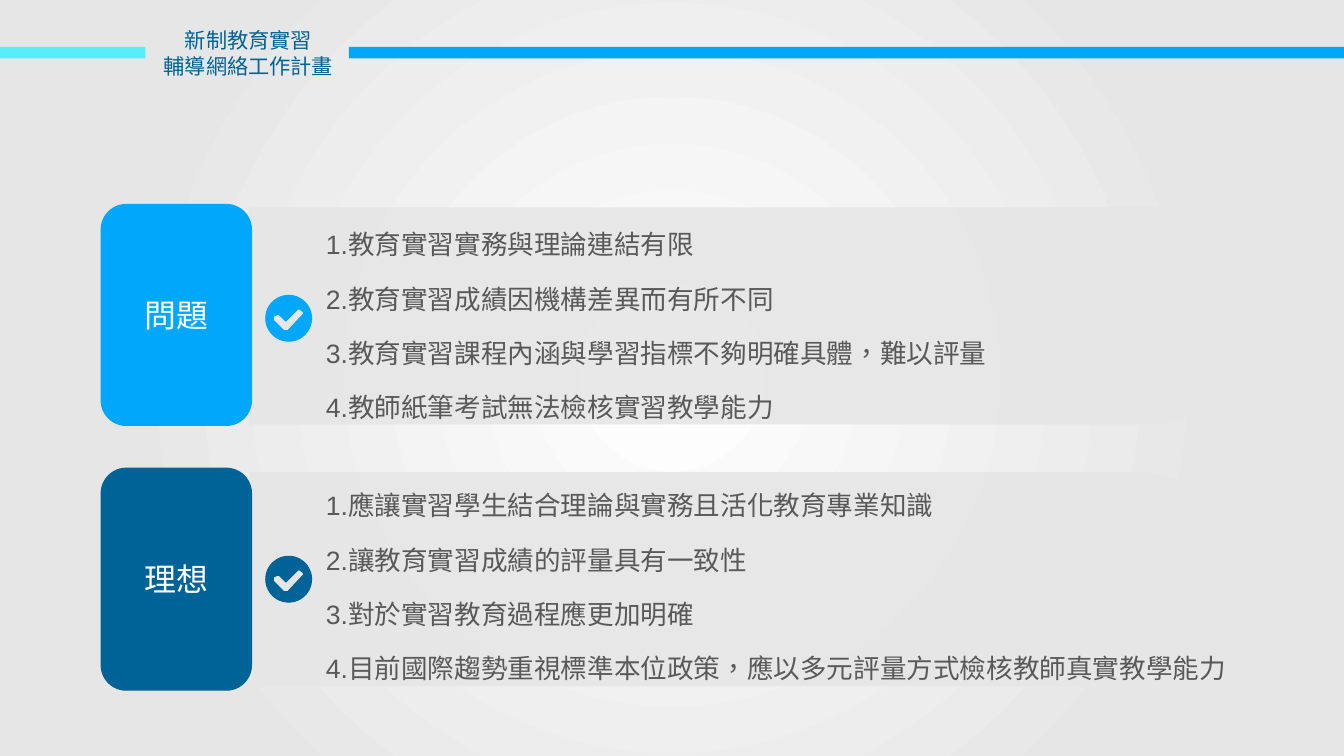
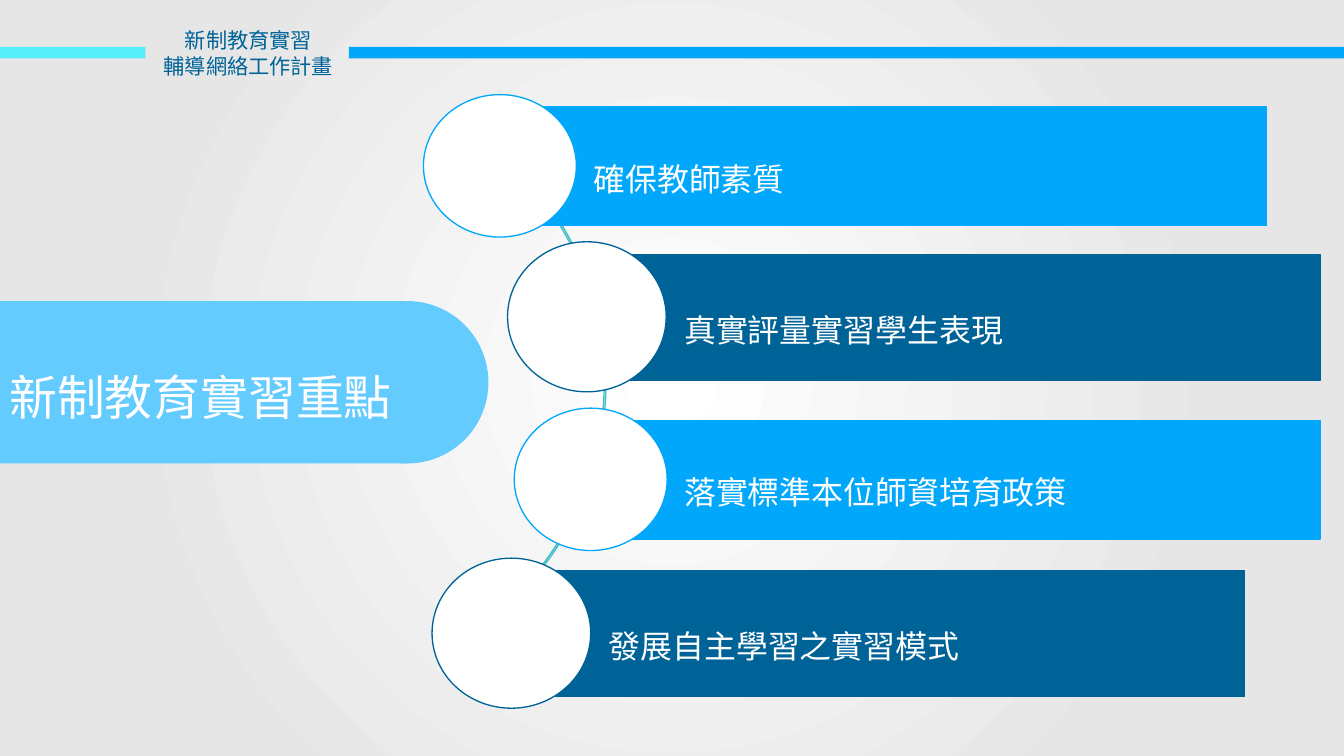
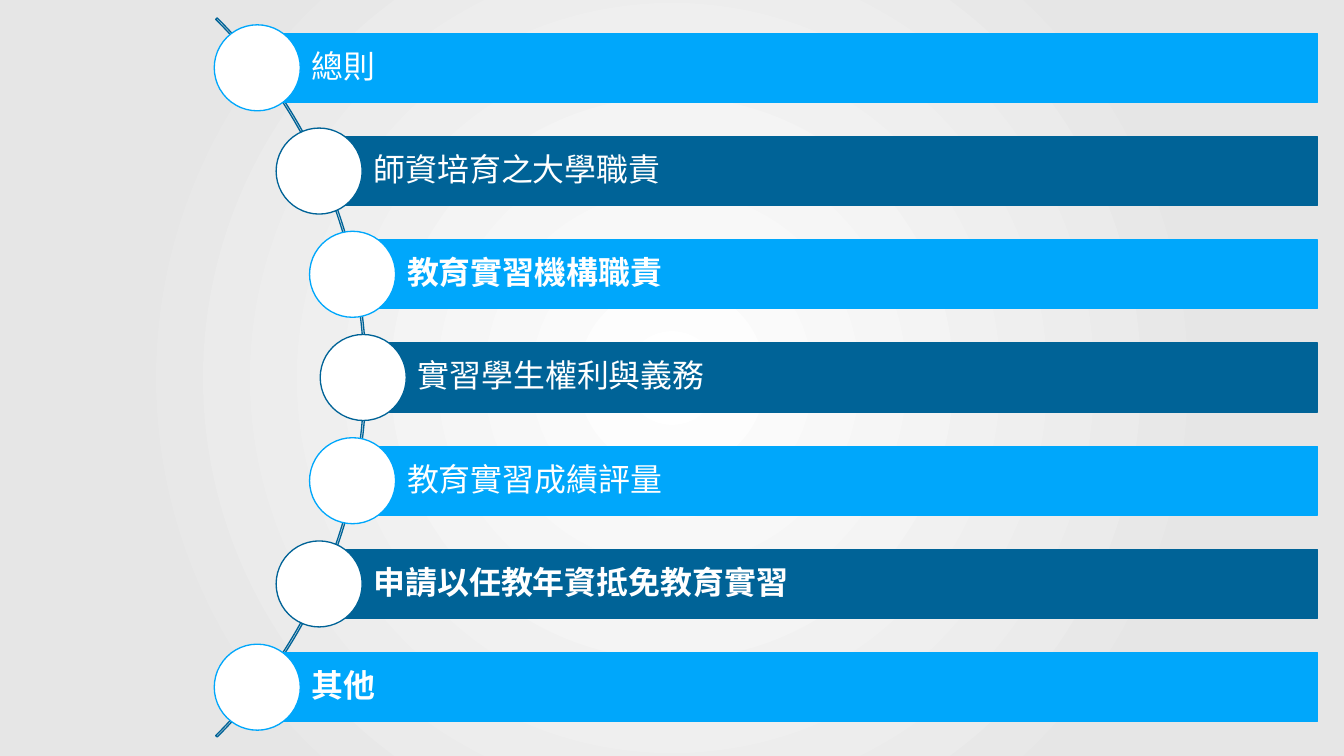
import math
from dataclasses import dataclass
from typing import Optional

import pptx
import pptx.dml.color
import pptx.enum.lang
import pptx.enum.shapes
import pptx.enum.text
import pptx.oxml.ns
import pptx.presentation
import pptx.shapes.autoshape
import pptx.slide
import pptx.util
from lxml import etree

Inches = pptx.util.Inches
Pt = pptx.util.Pt
Color = pptx.dml.color.RGBColor
Shape = pptx.shapes.autoshape.Shape
Slide = pptx.slide.Slide
Kind = pptx.enum.shapes.MSO_SHAPE
Align = pptx.enum.text.PP_ALIGN
Anchor = pptx.enum.text.MSO_ANCHOR
qn = pptx.oxml.ns.qn
Points = list[tuple[float, float]]


@dataclass(frozen=True)
class Theme:
    white: Color = Color(0xFF, 0xFF, 0xFF)
    gray: Color = Color(0xE6, 0xE6, 0xE6)
    ink: Color = Color(0x59, 0x59, 0x59)
    blue: Color = Color(0x00, 0xA7, 0xFB)
    navy: Color = Color(0x00, 0x63, 0x97)
    sky: Color = Color(0x64, 0xCB, 0xFF)
    cyan: Color = Color(0x55, 0xEE, 0xFB)
    teal: Color = Color(0x44, 0xBF, 0xC9)
    font: str = "Arial"
    chapter_font: str = "Noto Sans CJK SC"
    header: int = 16
    body: int = 20
    label: int = 24
    banner: int = 36


THEME = Theme()
SLIDE_WIDTH, SLIDE_HEIGHT = 14.06, 7.91


@dataclass(frozen=True)
class Area:
    left: float
    top: float
    width: float
    height: float

    def emu(self) -> tuple[int, int, int, int]:
        return (Inches(self.left), Inches(self.top), Inches(self.width), Inches(self.height))


@dataclass(frozen=True)
class Topic:
    label: str
    color: Color
    card: Area
    panel: Area
    items_area: Area
    check_center: tuple[float, float]
    items: tuple[str, ...]


@dataclass(frozen=True)
class RingStyle:
    color: Color
    bar_height: float
    ring_width: float
    text_left: float
    text_top: float


@dataclass(frozen=True)
class Goal:
    text: str
    left: float
    top: float
    width: float
    style: RingStyle


@dataclass(frozen=True)
class Chapter:
    text: str
    bold: bool = False


TOPICS = (
    Topic("問題", THEME.blue, Area(1.06, 2.14, 1.57, 2.31), Area(2.61, 2.17, 10.09, 2.27),
          Area(3.41, 2.22, 9.31, 2.16), (3.02, 3.33),
          ("教育實習實務與理論連結有限", "教育實習成績因機構差異而有所不同",
           "教育實習課程內涵與學習指標不夠明確具體，難以評量", "教師紙筆考試無法檢核實習教學能力")),
    Topic("理想", THEME.navy, Area(1.06, 4.9, 1.57, 2.32), Area(2.61, 4.94, 9.94, 2.24),
          Area(3.41, 4.95, 9.54, 2.22), (3.02, 6.06),
          ("應讓實習學生結合理論與實務且活化教育專業知識", "讓教育實習成績的評量具有一致性",
           "對於實習教育過程應更加明確",
           "目前國際趨勢重視標準本位政策，應以多元評量方式檢核教師真實教學能力")),
)

SHORT = RingStyle(THEME.blue, 1.24, 1.6, 0.67, 0.3)
TALL = RingStyle(THEME.navy, 1.32, 1.66, 0.74, 0.34)
GOALS = (
    Goal("確保教師素質", 5.44, 1.12, 7.81, SHORT),
    Goal("真實評量實習學生表現", 6.32, 2.66, 7.49, TALL),
    Goal("落實標準本位師資培育政策", 6.39, 4.4, 7.42, SHORT),
    Goal("發展自主學習之實習模式", 5.53, 5.97, 7.49, TALL),
)

CHAPTERS = (
    Chapter("總則"),
    Chapter("師資培育之大學職責"),
    Chapter("教育實習機構職責", bold=True),
    Chapter("實習學生權利與義務"),
    Chapter("教育實習成績評量"),
    Chapter("申請以任教年資抵免教育實習", bold=True),
    Chapter("其他", bold=True),
)

CHECK_MARK: Points = [
    (0.15, -0.07), (0.11, -0.1), (0.09, -0.09), (-0.03, 0.03), (-0.1, -0.04), (-0.12, -0.04),
    (-0.16, -0.02), (-0.16, 0.02), (-0.05, 0.13), (-0.01, 0.13), (0.15, -0.04), (0.16, -0.05),
]


def write(shape: Shape, text: str, *, size: int, color: Color, font: str = THEME.font,
          bold: bool = False, align: Align = Align.LEFT, anchor: Anchor = Anchor.TOP,
          line_spacing: float = 1.0, space_before: float = 0, wrap: bool = True,
          insets: tuple[float, float, float, float] = (0.1, 0.05, 0.1, 0.05)) -> None:
    frame = shape.text_frame
    frame.auto_size = pptx.enum.text.MSO_AUTO_SIZE.NONE
    frame.word_wrap = wrap
    frame.vertical_anchor = anchor
    (frame.margin_left, frame.margin_top,
     frame.margin_right, frame.margin_bottom) = map(Inches, insets)
    frame.text = text
    for para in frame.paragraphs:
        para.alignment = align
        para.line_spacing = line_spacing
        para.space_before = Pt(space_before)
        for span in para.runs:
            span.font.size = Pt(size)
            span.font.bold = bold
            span.font.color.rgb = color
            span.font.name = font
            span.font.language_id = pptx.enum.lang.MSO_LANGUAGE_ID.TRADITIONAL_CHINESE
    for properties in shape.element.iter(qn("a:rPr")):
        etree.SubElement(properties, qn("a:ea"), typeface=font)


def paint(shape: Shape, fill: Optional[Color], line: Optional[Color], width: float = 1) -> Shape:
    shape.shadow.inherit = False
    if fill is None:
        shape.fill.background()
    else:
        shape.fill.solid()
        shape.fill.fore_color.rgb = fill
    if line is None:
        shape.line.fill.background()
    else:
        shape.line.color.rgb = line
        shape.line.width = Pt(width)
    return shape


def add_block(page: Slide, kind: Kind, area: Area, fill: Optional[Color],
              line: Optional[Color] = None) -> Shape:
    return paint(page.shapes.add_shape(kind, *area.emu()), fill, line)


def add_text(page: Slide, area: Area, text: str, **text_format) -> None:
    write(page.shapes.add_textbox(*area.emu()), text, **text_format)


def add_outline(page: Slide, contours: list[Points], fill: Color,
                line: Optional[Color] = None) -> Shape:
    scaled = [[(Inches(x), Inches(y)) for x, y in contour] for contour in contours]
    builder = page.shapes.build_freeform(*scaled[0][0], scale=1.0)
    for index, contour in enumerate(scaled):
        if index:
            builder.move_to(*contour[0])
        builder.add_line_segments(contour[1:], close=True)
    return paint(builder.convert_to_shape(), fill, line, 0.75)


def arc_points(center: tuple[float, float], radius_x: float, radius_y: float,
               start: int, end: int, step: int = 6) -> Points:
    return [(center[0] + radius_x * math.cos(math.radians(angle)),
             center[1] + radius_y * math.sin(math.radians(angle)))
            for angle in range(start, end + 1, step)]


def add_arc(page: Slide, area: Area, color: Color,
            adjustments: tuple[float, float, float]) -> None:
    arc = add_block(page, Kind.BLOCK_ARC, area, None, color)
    for index, value in enumerate(adjustments):
        arc.adjustments[index] = value


def add_panel(page: Slide, area: Area) -> None:
    radius_x, radius_y = 0.62, 0.38
    right, bottom = area.left + area.width, area.top + area.height
    outline = [(area.left, bottom), (area.left, area.top)]
    outline += arc_points((right - radius_x, area.top + radius_y), radius_x, radius_y, -90, 0)
    outline += arc_points((right - radius_x, bottom - radius_y), radius_x, radius_y, 0, 90)
    panel = add_outline(page, [outline], THEME.gray)
    fill_color = panel.element.spPr.find(qn("a:solidFill"))[0]
    etree.SubElement(fill_color, qn("a:alpha"), val="90000")


def add_check(page: Slide, center: tuple[float, float], color: Color) -> None:
    disc = arc_points(center, 0.24, 0.24, 0, 354)
    mark = [(center[0] + x, center[1] + y) for x, y in CHECK_MARK]
    add_outline(page, [disc, mark], color, color)


def set_background(deck: pptx.presentation.Presentation) -> None:
    master = deck.slide_master
    fill = master.background.fill
    fill.gradient()
    for stop, color, position in zip(fill.gradient_stops, (THEME.white, THEME.gray), (0, 0.73)):
        stop.color.rgb = color
        stop.position = position
    gradient = master.element.find(".//" + qn("a:gradFill"))
    gradient.remove(gradient.find(qn("a:lin")))
    circle = etree.SubElement(gradient, qn("a:path"), path="circle")
    etree.SubElement(circle, qn("a:fillToRect"), l="50000", t="50000", r="50000", b="50000")


def add_headed_page(deck: pptx.presentation.Presentation) -> Slide:
    page = deck.slides.add_slide(deck.slide_layouts.get_by_name("Title Only"))
    title = page.shapes.title
    title.left, title.top, title.width, title.height = Area(1.6, 0.24, 2, 0.64).emu()
    write(title, "新制教育實習\n輔導網絡工作計畫", size=THEME.header, color=THEME.navy,
          align=Align.CENTER, wrap=False)
    add_block(page, Kind.RECTANGLE, Area(3.65, 0.49, 10.41, 0.12), THEME.blue)
    add_block(page, Kind.RECTANGLE, Area(0, 0.49, 1.52, 0.12), THEME.cyan)
    return page


def build_topics(deck: pptx.presentation.Presentation) -> None:
    page = add_headed_page(deck)
    for topic in TOPICS:
        add_panel(page, topic.panel)
        numbered = "\n".join(f"{number}.{item}" for number, item in enumerate(topic.items, 1))
        add_text(page, topic.items_area, numbered, size=THEME.body, color=THEME.ink,
                 line_spacing=1.5, space_before=5, insets=(0, 0, 0, 0))
        add_check(page, topic.check_center, topic.color)
        card = add_block(page, Kind.ROUNDED_RECTANGLE, topic.card, topic.color, topic.color)
        write(card, topic.label, size=THEME.label, color=THEME.white, align=Align.CENTER,
              anchor=Anchor.MIDDLE, insets=(0, 0, 0, 0))


def add_goal(page: Slide, goal: Goal) -> None:
    style = goal.style
    bar = Area(goal.left, goal.top, goal.width, style.bar_height)
    ring = Area(goal.left - 1.01, goal.top - 0.13, style.ring_width, style.bar_height + 0.25)
    add_block(page, Kind.RECTANGLE, bar, style.color, style.color)
    add_block(page, Kind.OVAL, ring, THEME.white, style.color)
    label = Area(goal.left + style.text_left, goal.top + style.text_top, goal.width - 0.58, 0.63)
    add_text(page, label, goal.text, size=THEME.label, color=THEME.white,
             align=Align.JUSTIFY, line_spacing=1.5)


def build_goals(deck: pptx.presentation.Presentation) -> None:
    page = add_headed_page(deck)
    add_block(page, Kind.OVAL, Area(3.41, 3.15, 1.7, 1.7), THEME.sky)
    banner = add_block(page, Kind.RECTANGLE, Area(0, 3.15, 4.27, 1.7), THEME.sky)
    write(banner, "新制教育實習重點", size=THEME.banner, color=THEME.white,
          anchor=Anchor.MIDDLE, line_spacing=1.5)
    add_arc(page, Area(0.02, 0.84, 6.32, 6.32), THEME.teal, (179.985, 36.015, 0.003))
    for goal in GOALS:
        add_goal(page, goal)


def build_chapters(deck: pptx.presentation.Presentation) -> None:
    page = deck.slides.add_slide(deck.slide_layouts.get_by_name("Blank"))
    center_x, center_y, radius = -1.49, 3.95, 5.29
    pitch, bar_height, ring_size, right = 1.08, 0.72, 0.9, 13.78
    add_arc(page, Area(-6.81, -1.37, 10.64, 10.64), THEME.navy, (189, 27, 0.002))
    for index, chapter in enumerate(CHAPTERS):
        color = (THEME.blue, THEME.navy)[index % 2]
        offset = (index - (len(CHAPTERS) - 1) / 2) * pitch
        x, y = center_x + math.sqrt(radius ** 2 - offset ** 2), center_y + offset
        bar_area = Area(x, y - bar_height / 2, right - x, bar_height)
        bar = add_block(page, Kind.RECTANGLE, bar_area, color, color)
        write(bar, chapter.text, size=THEME.label, color=THEME.white, font=THEME.chapter_font,
              bold=chapter.bold, anchor=Anchor.MIDDLE, line_spacing=0.9,
              insets=(0.57, 0.07, 0.07, 0.07))
        ring = Area(x - ring_size / 2, y - ring_size / 2, ring_size, ring_size)
        add_block(page, Kind.OVAL, ring, THEME.white, color)


def main() -> None:
    deck = pptx.Presentation()
    deck.slide_width, deck.slide_height = Inches(SLIDE_WIDTH), Inches(SLIDE_HEIGHT)
    set_background(deck)
    build_topics(deck)
    build_goals(deck)
    build_chapters(deck)
    deck.save("out.pptx")


if __name__ == "__main__":
    main()
